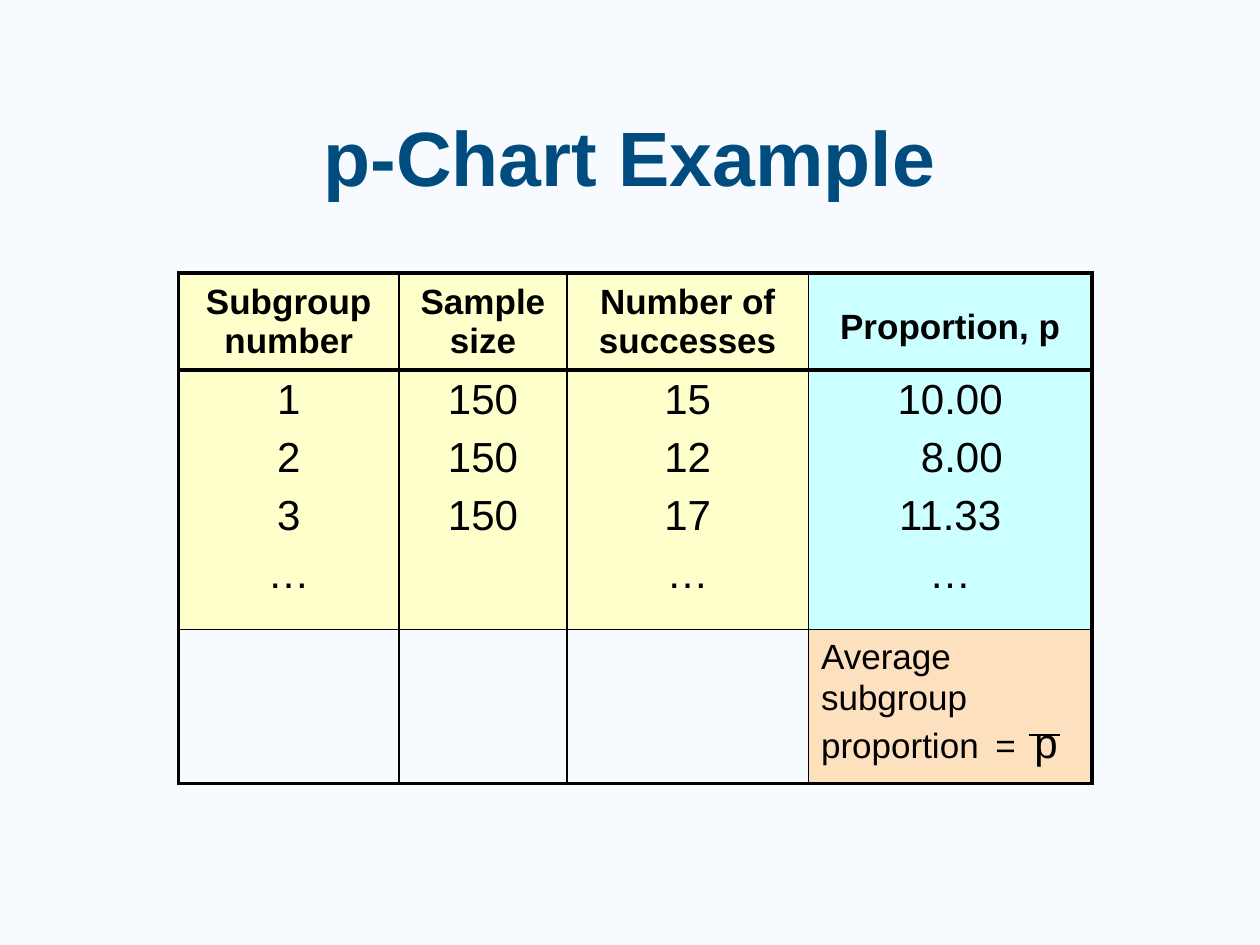
from lxml.etree import SubElement
from pptx import Presentation
from pptx.dml.color import RGBColor
from pptx.enum.shapes import MSO_CONNECTOR
from pptx.enum.text import MSO_ANCHOR, PP_ALIGN
from pptx.oxml.ns import qn
from pptx.util import Pt

BACKGROUND = RGBColor(0xF7, 0xFB, 0xFF)
TITLE_BLUE = RGBColor(0x00, 0x4C, 0x7E)
BLACK = RGBColor(0x00, 0x00, 0x00)
YELLOW = RGBColor(0xFF, 0xFF, 0xCC)
CYAN = RGBColor(0xCC, 0xFF, 0xFF)
PEACH = RGBColor(0xFD, 0xE0, 0xBD)

FONT = "Arial"
THICK, THIN = 2.25, 1
COLUMN_WIDTHS = [126, 96, 138, 162]
ROW_HEIGHTS = [55.5, 148.3, 87.8]
COLUMN_FILLS = [YELLOW, YELLOW, YELLOW, CYAN]

HEADERS = ["Subgroup number", "Sample size", "Number of successes", "Proportion, p"]
HEADER_SPACING = [1, 1, 1, 1.3]
COLUMN_VALUES = [
    ["1", "2", "3", "…"],
    ["150", "150", "150"],
    ["15", "12", "17", "…"],
    ["10.00", "8.00", "11.33", "…"],
]
# Text, size and extra letter spacing of each run
AVERAGE_RUNS = [
    ("Average subgroup proportion", 20, 0),
    (" ", 24, 2.8),
    ("=", 20, 0),
    (" ", 24, 3.9),
    ("p", 24, 0),
]

HEADER_FORMAT = {"name": FONT, "size": Pt(20), "bold": True}
VALUE_FORMAT = {"name": FONT, "size": Pt(24), "bold": False}
TITLE_FORMAT = {"name": FONT, "size": Pt(44), "bold": True}
CENTERED = {"alignment": PP_ALIGN.CENTER}


def set_attributes(target, values):
    for name, value in values.items():
        setattr(target, name, value)


def add_run(paragraph, text, font_format, color=BLACK):
    run = paragraph.add_run()
    run.text = text
    set_attributes(run.font, font_format)
    run.font.color.rgb = color
    return run


def add_title(slide, text):
    title = slide.shapes.add_textbox(Pt(54), Pt(48), Pt(612), Pt(90))
    frame = title.text_frame
    set_attributes(frame, {"word_wrap": True, "vertical_anchor": MSO_ANCHOR.MIDDLE})
    paragraph = frame.paragraphs[0]
    set_attributes(paragraph, {**CENTERED, "line_spacing": 0.85})
    add_run(paragraph, text, TITLE_FORMAT, TITLE_BLUE)


def set_borders(cell, widths):
    """Draw black borders; widths are in the order left, right, top, bottom."""
    properties = cell._tc.get_or_add_tcPr()
    for side, width in zip("LRTB", widths):
        line = SubElement(properties, qn(f"a:ln{side}"), w=str(Pt(width)))
        fill = SubElement(line, qn("a:solidFill"))
        SubElement(fill, qn("a:srgbClr"), val=str(BLACK))


def fill_cell(cell, color):
    cell.fill.solid()
    cell.fill.fore_color.rgb = color


def add_table(slide):
    """Add the empty grid: thick frame and header rule, thin lines elsewhere."""
    table = slide.shapes.add_table(
        len(ROW_HEIGHTS), len(COLUMN_WIDTHS), Pt(102), Pt(156),
        Pt(sum(COLUMN_WIDTHS)), Pt(sum(ROW_HEIGHTS)),
    ).table
    set_attributes(table, {"first_row": False, "horz_banding": False})
    for column, width in zip(table.columns, COLUMN_WIDTHS):
        column.width = Pt(width)
    for row, height in zip(table.rows, ROW_HEIGHTS):
        row.height = Pt(height)
    last_row, last_column = len(ROW_HEIGHTS) - 1, len(COLUMN_WIDTHS) - 1
    for row in range(last_row + 1):
        for column in range(last_column + 1):
            cell = table.cell(row, column)
            thick_sides = [column == 0, column == last_column, row < 2, row != 1]
            set_borders(cell, [THICK if thick else THIN for thick in thick_sides])
            cell.fill.background()
    return table


def write_header(cell, text, color, line_spacing):
    fill_cell(cell, color)
    cell.vertical_anchor = MSO_ANCHOR.MIDDLE
    paragraph = cell.text_frame.paragraphs[0]
    set_attributes(paragraph, {**CENTERED, "line_spacing": line_spacing})
    add_run(paragraph, text, HEADER_FORMAT)


def write_values(cell, values, color):
    fill_cell(cell, color)
    frame = cell.text_frame
    for index, value in enumerate(values):
        paragraph = frame.add_paragraph() if index else frame.paragraphs[0]
        set_attributes(paragraph, {**CENTERED, "space_before": Pt(6.5 if index else 0)})
        if value == "8.00":  # Lines the decimal points up
            paragraph._p.get_or_add_pPr().set("marL", str(Pt(13.3)))
        add_run(paragraph, value, VALUE_FORMAT)


def write_average(cell):
    fill_cell(cell, PEACH)
    paragraph = cell.text_frame.paragraphs[0]
    paragraph.line_spacing = 1.05
    for text, size, letter_spacing in AVERAGE_RUNS:
        run = add_run(paragraph, text, {**VALUE_FORMAT, "size": Pt(size)})
        if letter_spacing:
            run.font._element.set("spc", str(round(letter_spacing * 100)))


def add_overbar(slide):
    overbar = slide.shapes.add_connector(
        MSO_CONNECTOR.STRAIGHT, Pt(588), Pt(420), Pt(606), Pt(420))
    overbar.line.color.rgb = BLACK
    overbar.line.width = Pt(1.5)
    SubElement(overbar._element.spPr, qn("a:effectLst"))


def main():
    presentation = Presentation()
    set_attributes(presentation, {"slide_width": Pt(720), "slide_height": Pt(540)})
    slide = presentation.slides.add_slide(presentation.slide_layouts[6])
    slide.background.fill.solid()
    slide.background.fill.fore_color.rgb = BACKGROUND

    add_title(slide, "p-Chart Example")
    table = add_table(slide)
    for column, color in enumerate(COLUMN_FILLS):
        write_header(table.cell(0, column), HEADERS[column], color, HEADER_SPACING[column])
        write_values(table.cell(1, column), COLUMN_VALUES[column], color)
    write_average(table.cell(2, 3))
    add_overbar(slide)
    presentation.save("out.pptx")


if __name__ == "__main__":
    main()
